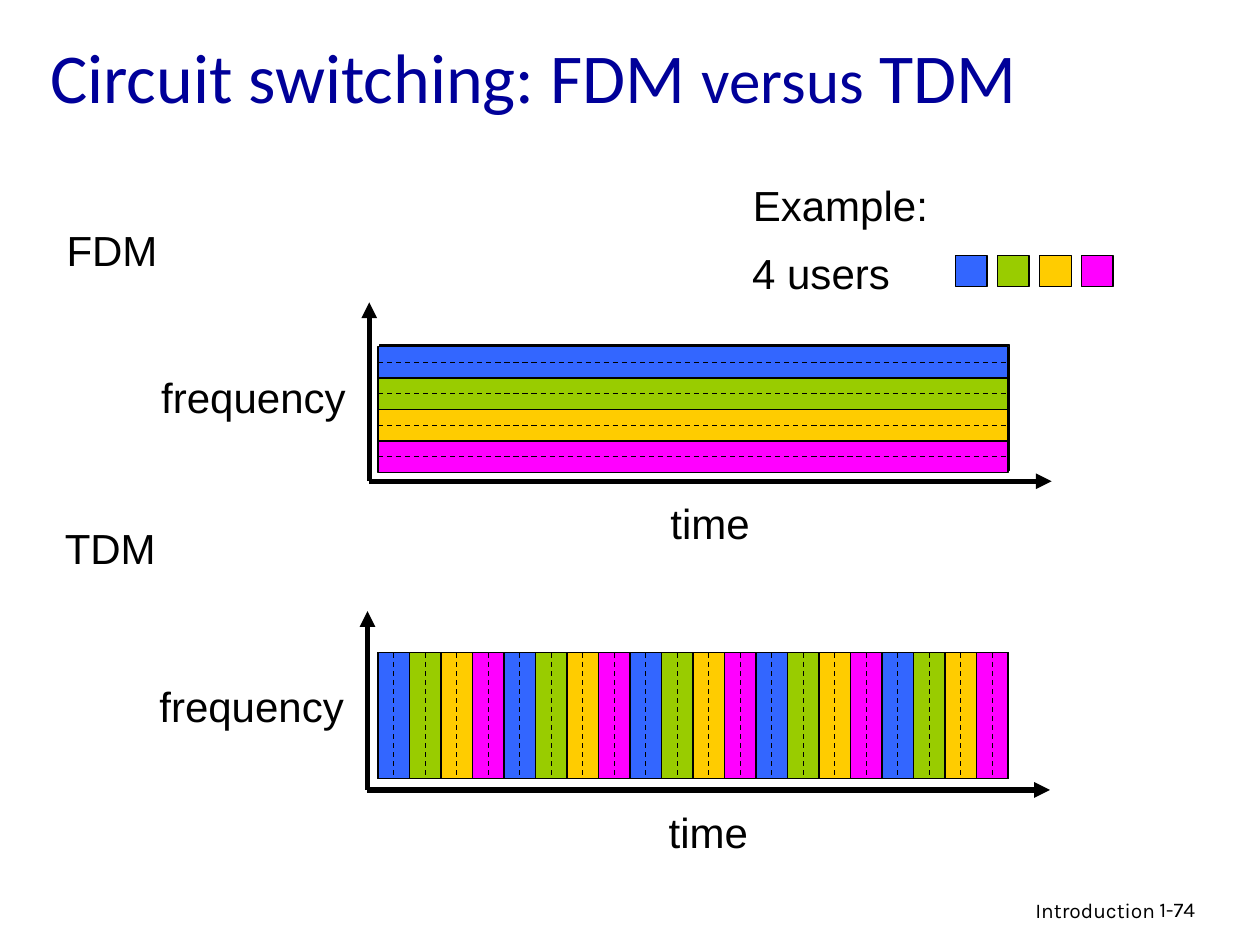
"""Build a slide comparing frequency and time division multiplexing."""
from dataclasses import dataclass

from pptx import Presentation
from pptx.dml.color import RGBColor
from pptx.enum import dml, shapes, text
from pptx.oxml.xmlchemy import OxmlElement
from pptx.util import Pt


@dataclass(frozen=True)
class Theme:
    black: RGBColor = RGBColor(0, 0, 0)
    title: RGBColor = RGBColor(0x00, 0x00, 0x99)
    backing: RGBColor = RGBColor(0x00, 0xCC, 0x99)
    users: tuple = tuple(
        RGBColor.from_string(c) for c in ("3366FF", "99CC00", "FFCC00", "FF00FF"))
    title_size: int = 40
    versus_size: int = 36
    label_size: int = 24
    footer_size: int = 12
    thin: float = 0.75
    thick: float = 3


theme = Theme()
prs = Presentation()
prs.slide_width, prs.slide_height = Pt(720), Pt(540)
s = prs.slides.add_slide(prs.slide_layouts[5])


def add_label(content, x, y, w, h=36, size=theme.label_size, font="Arial",
              align=text.PP_ALIGN.CENTER, wrap=False):
    tf = s.shapes.add_textbox(Pt(x), Pt(y), Pt(w), Pt(h)).text_frame
    tf.text = content
    tf.word_wrap = wrap
    if not wrap:
        tf.auto_size = text.MSO_AUTO_SIZE.SHAPE_TO_FIT_TEXT
    p = tf.paragraphs[0]
    p.alignment = align
    r = p.runs[0]
    r.font.name, r.font.size = font, Pt(size)
    r.font.color.rgb = theme.black


def add_line(x1, y1, x2, y2, width=theme.thin, arrow=False):
    line = s.shapes.add_connector(
        shapes.MSO_CONNECTOR.STRAIGHT, Pt(x1), Pt(y1), Pt(x2), Pt(y2))
    line.line.color.rgb = theme.black
    line.line.width = Pt(width)
    if arrow:
        head = OxmlElement("a:tailEnd")
        head.set("type", "triangle")
        line.line._get_or_add_ln().append(head)
    line._element.spPr.append(OxmlElement("a:effectLst"))
    return line


title = s.shapes.title
title.left, title.top, title.width, title.height = Pt(21.6), Pt(5.76), Pt(666.7), Pt(74.9)
tf = title.text_frame
tf.auto_size = text.MSO_AUTO_SIZE.NONE
tf.vertical_anchor = text.MSO_ANCHOR.MIDDLE
p = tf.paragraphs[0]
p.alignment = text.PP_ALIGN.LEFT
for content, size in (("Circuit switching: FDM ", theme.title_size),
                      ("versus", theme.versus_size),
                      (" TDM", theme.title_size)):
    r = p.add_run()
    r.text = content
    r.font.name, r.font.size = "Calibri", Pt(size)
    r.font.color.rgb = theme.title

for name, name_x, name_y, axis_x, axis_y in (("FDM", 30, 124.6, 211, 275),
                                             ("TDM", 29, 295.2, 210, 451.4)):
    add_label(name, name_x, name_y, 68)
    add_line(axis_x, axis_y, axis_x, axis_y - 102.2, theme.thick, arrow=True)
    add_label("frequency", axis_x - 126.2, axis_y - 66.2, 120)
    add_line(axis_x, axis_y, axis_x + 390, axis_y, theme.thick, arrow=True)
    add_label("time", axis_x + 164.8, axis_y + 5.8, 60)

left, width, height, step = 216, 360, 72, 18
fdm_top, tdm_top = 198, 373
bands, slots = height // step, width // step
users = len(theme.users)

boxes = [(left + 0.8, fdm_top - 0.9, width, height, theme.backing, None),
         (left, tdm_top, width, height, theme.backing, None)]
boxes += [(left, fdm_top + i * step, width, step, theme.users[i], (1, 3))
          for i in range(bands)]
boxes += [(left + i * step, tdm_top, step, height, theme.users[i % users], (0, 2))
          for i in range(slots)]
boxes += [(546.1 + i * 24, 145.9, step, step, color, None)
          for i, color in enumerate(theme.users)]

channels = []
for x, y, w, h, color, sides in boxes:
    sp = s.shapes.add_shape(shapes.MSO_SHAPE.RECTANGLE, Pt(x), Pt(y), Pt(w), Pt(h))
    sp.shadow.inherit = False
    sp.fill.solid()
    sp.fill.fore_color.rgb = color
    sp.line.color.rgb = theme.black
    sp.line.width = Pt(theme.thin)
    if sides:
        channels.append((sp, sides))

for i in range(1, bands):
    add_line(left, fdm_top + i * step, left + width, fdm_top + i * step)
for i in range(1, slots):
    add_line(left + i * step, tdm_top, left + i * step, tdm_top + height)

for sp, (start, end) in channels:
    middle = add_line(0, 0, 0, 0)
    middle.begin_connect(sp, start)
    middle.end_connect(sp, end)
    middle.line.dash_style = dml.MSO_LINE.DASH

add_label("Example:", 423, 99, 114.5)
add_label("4 users", 422.4, 138.2, 93.6)
add_label("Introduction", 439, 509.3, 228.2, 22, theme.footer_size, "Karla",
          text.PP_ALIGN.RIGHT, True)
add_label("1-74", 655.4, 509, 53.3, 22, theme.footer_size, "Karla",
          text.PP_ALIGN.LEFT, True)

prs.save("out.pptx")
